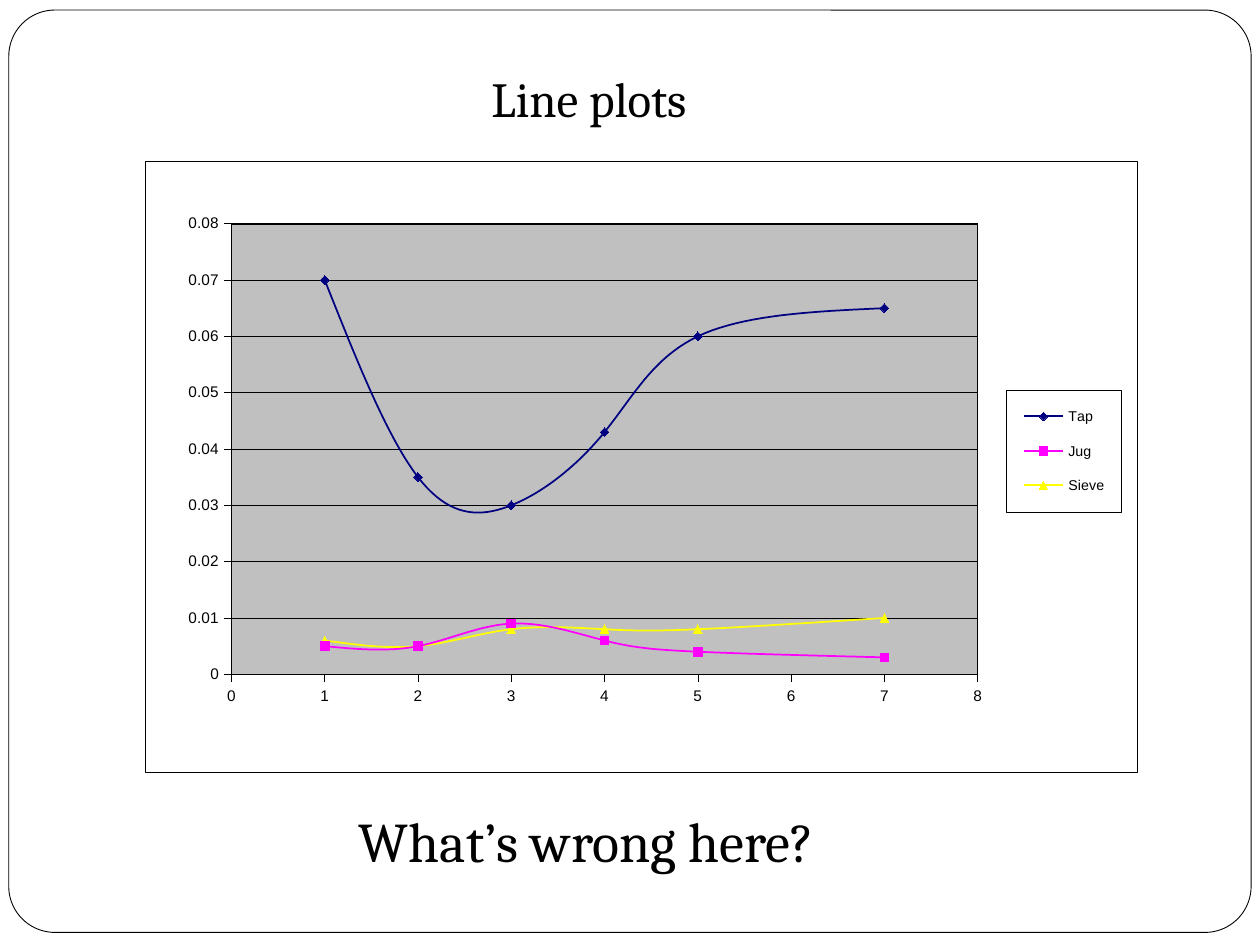
from lxml.etree import SubElement
from pptx import Presentation
from pptx.chart.data import XyChartData
from pptx.dml.color import RGBColor
from pptx.enum.chart import XL_CHART_TYPE as Kind, XL_LEGEND_POSITION as Side
from pptx.enum.chart import XL_MARKER_STYLE as Mark, XL_TICK_MARK as Tick
from pptx.enum.shapes import MSO_SHAPE as Form
from pptx.enum.text import MSO_ANCHOR as Anchor, PP_ALIGN as Align
from pptx.oxml import parse_xml
from pptx.oxml.ns import nsdecls, qn
from pptx.util import Inches, Pt

TITLE = ("Line plots", 28, (3.8, 0.49, 1.91, 0.57))
QUERY = ("What’s wrong here?", 32, (2.75, 6.35, 4.31, 0.64))
FRAME = (0.07, 0.08, 9.86, 7.32)
CHART = (1.15, 1.28, 7.88, 4.85)
PLOT = (0.087, 0.102, 0.752, 0.738)
KEY = (0.868, 0.374, 0.116, 0.2)
DAYS = [1, 2, 3, 4, 5, 7]
LINES = [
    ("Tap ", "000080", Mark.DIAMOND, [0.07, 0.035, 0.03, 0.043, 0.06, 0.065]),
    ("Jug", "FF00FF", Mark.SQUARE, [0.005, 0.005, 0.009, 0.006, 0.004, 0.003]),
    ("Sieve", "FFFF00", Mark.TRIANGLE, [0.006, 0.005, 0.008, 0.008, 0.008, 0.01]),
]
AXES = [(8, 1, "0"), (0.08, 0.01, "General")]


def rgb(code):
    return RGBColor.from_string(code)


def paint(part, code):
    part.fill.solid()
    part.fill.fore_color.rgb = rgb(code)


def stroke(line, code, width):
    line.color.rgb = rgb(code)
    line.width = Pt(width)


def style(font, name, size):
    font.name = name
    font.size = Pt(size)
    font.color.rgb = rgb("000000")


def write(shape, text, size, box):
    shape.left, shape.top, shape.width, shape.height = map(Inches, box)
    frame = shape.text_frame
    frame.word_wrap = False
    frame.vertical_anchor = Anchor.TOP
    para = frame.paragraphs[0]
    para.alignment = Align.LEFT
    run = para.add_run()
    run.text = text
    style(run.font, "Cambria", size)


def panel(fill):
    return parse_xml(
        f'<c:spPr {nsdecls("c", "a")}>'
        f'<a:solidFill><a:srgbClr val="{fill}"/></a:solidFill>'
        '<a:ln w="3175"><a:solidFill><a:srgbClr val="000000"/></a:solidFill></a:ln>'
        '</c:spPr>')


def layout(box, inner=False):
    node = parse_xml(f'<c:layout {nsdecls("c")}><c:manualLayout/></c:layout>')
    rules = [("layoutTarget", "inner")] if inner else []
    rules += [("xMode", "edge"), ("yMode", "edge"), *zip("xywh", box)]
    for tag, val in rules:
        SubElement(node[0], qn("c:" + tag)).set("val", str(val))
    return node


def curve(row):
    node = row._element
    for old in node.findall(qn("c:smooth")):
        node.remove(old)
    bend = parse_xml(f'<c:smooth {nsdecls("c")} val="1"/>')
    node.find(qn("c:yVal")).addnext(bend)


def plot(slide):
    data = XyChartData()
    for name, _, _, vals in LINES:
        row = data.add_series(name)
        for x, y in zip(DAYS, vals):
            row.add_data_point(x, y)
    chart = slide.shapes.add_chart(
        Kind.XY_SCATTER_SMOOTH, *map(Inches, CHART), data).chart
    chart.has_title = False
    style(chart.font, "Arial", 8.8)
    chart.plots[0].vary_by_categories = False
    for row, (_, code, mark, _) in zip(chart.plots[0].series, LINES):
        curve(row)
        stroke(row.format.line, code, 1)
        row.marker.style = mark
        row.marker.size = 5
        paint(row.marker.format, code)
        stroke(row.marker.format.line, code, 0.75)
    for axis, (top, step, form) in zip((chart.category_axis, chart.value_axis), AXES):
        axis.minimum_scale = 0
        axis.maximum_scale = top
        axis.major_unit = step
        axis.major_tick_mark = Tick.OUTSIDE
        axis.minor_tick_mark = Tick.NONE
        axis.has_major_gridlines = False
        axis.tick_labels.number_format = form
        axis.tick_labels.number_format_is_linked = False
        style(axis.tick_labels.font, "Arial", 8.8)
        stroke(axis.format.line, "000000", 0.25)
    chart.value_axis.has_major_gridlines = True
    stroke(chart.value_axis.major_gridlines.format.line, "000000", 0.25)

    chart.has_legend = True
    key = chart.legend
    key.position = Side.RIGHT
    key.include_in_layout = False
    style(key.font, "Arial", 8.1)

    root = chart.element.find(qn("c:chart"))
    root.addnext(panel("FFFFFF"))
    area = root.find(qn("c:plotArea"))
    legend = root.find(qn("c:legend"))
    for part in (area, legend):
        for old in part.findall(qn("c:layout")):
            part.remove(old)
    area.insert(0, layout(PLOT, True))
    area.append(panel("C0C0C0"))
    over = legend.find(qn("c:overlay"))
    over.addprevious(layout(KEY))
    over.addnext(panel("FFFFFF"))


def main():
    deck = Presentation()
    deck.slide_width, deck.slide_height = Inches(10), Inches(7.5)
    slide = deck.slides.add_slide(deck.slide_layouts[5])
    frame = slide.shapes.add_shape(Form.ROUNDED_RECTANGLE, *map(Inches, FRAME))
    frame.adjustments[0] = 0.05
    frame.shadow.inherit = False
    paint(frame, "FFFFFF")
    stroke(frame.line, "000000", 0.5)
    plot(slide)
    write(slide.shapes.add_textbox(0, 0, 0, 0), *QUERY)
    title = slide.shapes.title
    write(title, *TITLE)
    slide.shapes._spTree.append(title._element)
    deck.save("out.pptx")


if __name__ == "__main__":
    main()
